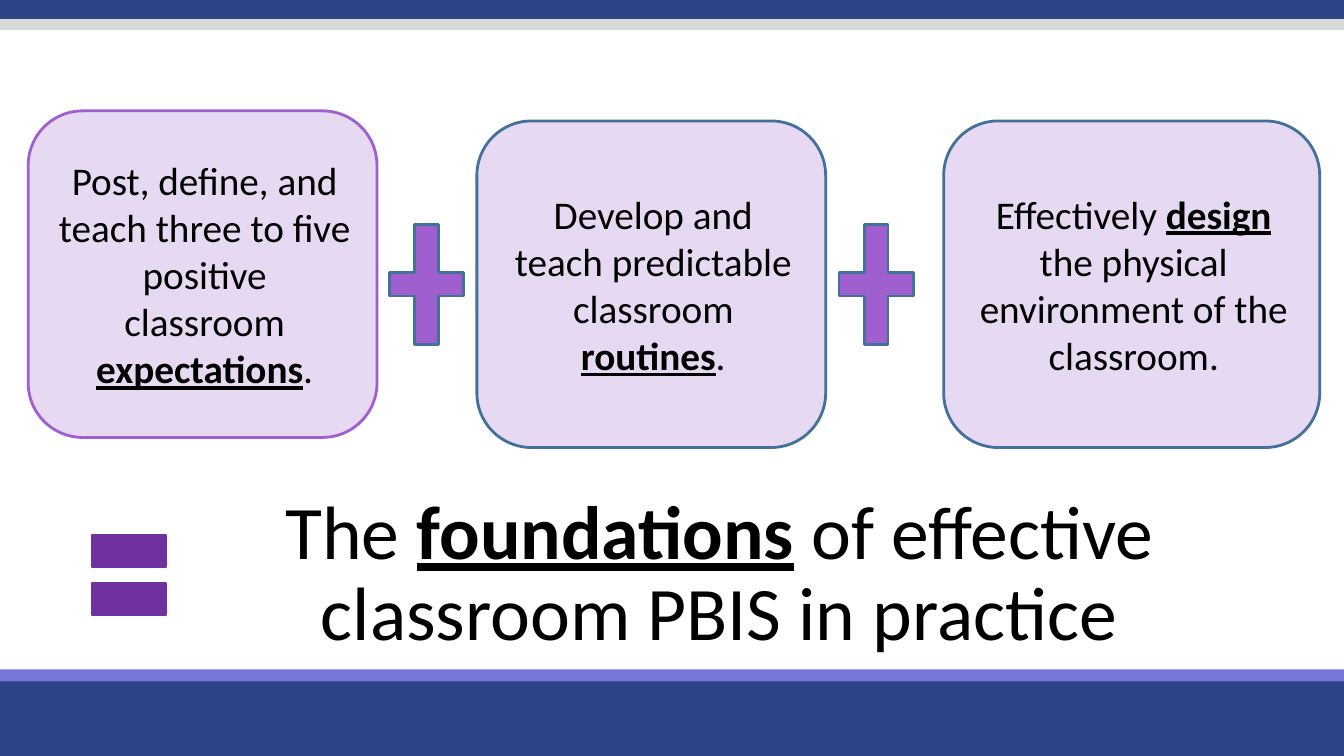
from dataclasses import dataclass
from pptx import Presentation
from pptx.dml.color import RGBColor
from pptx.enum.shapes import MSO_SHAPE as Kind
from pptx.enum.text import MSO_ANCHOR as Anchor, PP_ALIGN as Align
from pptx.util import Inches, Pt


@dataclass(frozen=True)
class Theme:
    font: str = "Calibri"
    navy: str = "2E4488"
    violet: str = "7476DA"
    gray: str = "D8D8D8"
    lilac: str = "E8D9F3"
    orchid: str = "9F5FCF"
    purple: str = "7030A0"
    steel: str = "42719B"
    ink: str = "000000"
    body: int = 28
    title: int = 54
    rule: int = 2


class Board:
    def __init__(self, slide, theme):
        self.shapes = slide.shapes
        self.theme = theme

    def shape(self, kind, box, fill, line=None, adjust=None):
        item = self.shapes.add_shape(kind, *map(Inches, box))
        item.shadow.inherit = False
        item.fill.solid()
        item.fill.fore_color.rgb = RGBColor.from_string(fill)
        if line:
            item.line.color.rgb = RGBColor.from_string(line)
            item.line.width = Pt(self.theme.rule)
        else:
            item.line.fill.background()
        if adjust:
            item.adjustments[0] = adjust
        return item

    def band(self, top, height, fill):
        self.shape(Kind.RECTANGLE, (0, top, 13.33, height), fill)

    def label(self, frame, parts, size, anchor):
        frame.word_wrap = True
        frame.vertical_anchor = anchor
        para = frame.paragraphs[0]
        para.alignment = Align.CENTER
        para.font.name = self.theme.font
        para.font.size = Pt(size)
        para.font.color.rgb = RGBColor.from_string(self.theme.ink)
        for index, text in enumerate(parts):
            run = para.add_run()
            run.text = text
            if index == 1:
                run.font.bold = run.font.underline = True
        return para

    def card(self, box, line, parts):
        item = self.shape(Kind.ROUNDED_RECTANGLE, box, self.theme.lilac, line, 0.167)
        para = self.label(item.text_frame, parts, self.theme.body, Anchor.MIDDLE)
        para._p.get_or_add_pPr().set("marL", str(Inches(0.04)))

    def title(self, box, parts):
        item = self.shapes.add_textbox(*map(Inches, box))
        para = self.label(item.text_frame, parts, self.theme.title, Anchor.BOTTOM)
        para.line_spacing = 0.9


def main():
    deck = Presentation()
    deck.slide_width, deck.slide_height = Inches(13.33), Inches(7.5)
    theme = Theme()
    board = Board(deck.slides.add_slide(deck.slide_layouts[6]), theme)

    for top, height, fill in (
        (6.7, 0.8, theme.navy),
        (6.64, 0.12, theme.violet),
        (0, 0.19, theme.navy),
        (0.19, 0.11, theme.gray),
    ):
        board.band(top, height, fill)

    board.title((1.5, 4.85, 11.27, 1.72),
                ("The ", "foundations", " of effective classroom PBIS in practice"))

    for left, top, width, line, parts in (
        (0.28, 1.1, 3.46, theme.orchid,
         ("Post, define, and teach three to five positive classroom ", "expectations", ".")),
        (4.73, 1.2, 3.46, theme.steel,
         ("Develop and teach predictable classroom ", "routines", ".")),
        (9.36, 1.2, 3.73, theme.steel,
         ("Effectively ", "design", " the physical environment of the classroom.")),
    ):
        board.card((left, top, width, 3.24), line, parts)

    for left in (3.73, 8.19):
        board.shape(Kind.MATH_PLUS, (left, 2.01, 1, 1.62), theme.orchid, theme.steel, 0.235)
    board.shape(Kind.MATH_EQUAL, (0.78, 5.03, 1, 1.35), theme.purple, theme.purple)

    deck.save("out.pptx")


if __name__ == "__main__":
    main()
